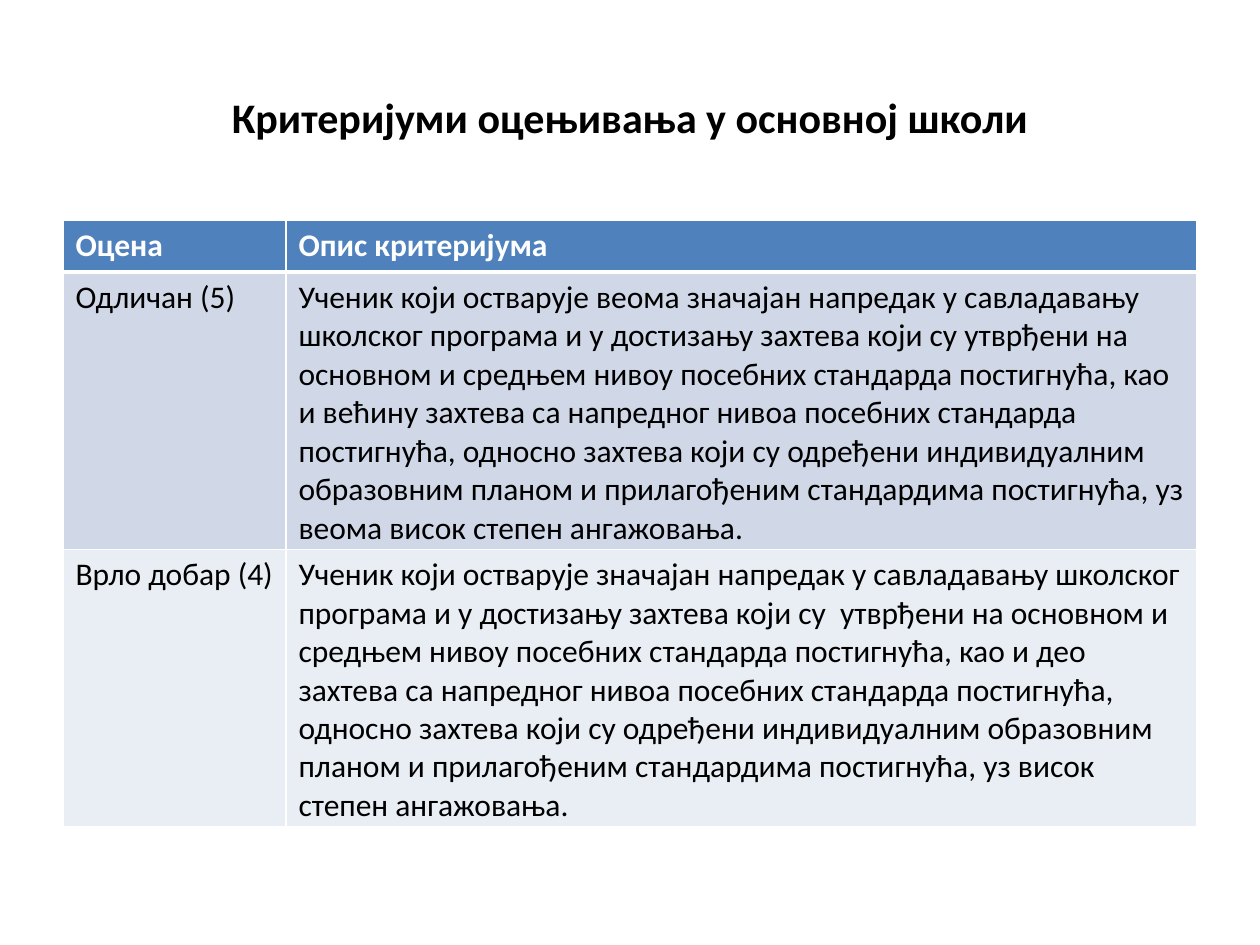
import dataclasses
import typing

import pptx
import pptx.dml.color
import pptx.enum.text
import pptx.oxml
import pptx.oxml.ns
import pptx.util

Inches = pptx.util.Inches
Pt = pptx.util.Pt


@dataclasses.dataclass(frozen=True)
class Theme:
    font: str = "Calibri"
    title: int = 24
    body: int = 18
    black: str = "000000"
    white: str = "FFFFFF"
    head: str = "4F81BD"
    dark: str = "D0D8E8"
    pale: str = "E9EDF4"
    thin: int = 1
    thick: int = 3


@dataclasses.dataclass(frozen=True)
class Row:
    grade: str
    text: str
    fill: str
    ink: str
    high: float
    bold: bool = False


THEME = Theme()
LEFT, WIDE = 0.5, 9
COLS = (1.77, 7.23)
ROWS = (
    Row("Оцена", "Опис критеријума", THEME.head, THEME.white, 0.41, True),
    Row(
        "Одличан (5)",
        "Ученик који остварује веома значајан напредак у савладавању школског "
        "програма и у достизању захтева који су утврђени на основном и средњем "
        "нивоу посебних стандарда постигнућа, као и већину захтева са напредног "
        "нивоа посебних стандарда постигнућа, односно захтева који су одређени "
        "индивидуалним образовним планом и прилагођеним стандардима постигнућа, "
        "уз веома висок степен ангажовања.",
        THEME.dark, THEME.black, 2.2,
    ),
    Row(
        "Врло добар (4)",
        "Ученик који остварује значајан напредак у савладавању школског "
        "програма и у достизању захтева који су  утврђени на основном и средњем "
        "нивоу посебних стандарда постигнућа, као и део захтева са напредног "
        "нивоа посебних стандарда постигнућа, односно захтева који су одређени "
        "индивидуалним образовним планом и прилагођеним стандардима постигнућа, "
        "уз висок степен ангажовања.",
        THEME.pale, THEME.black, 2.2,
    ),
)


def color(code: str) -> pptx.dml.color.RGBColor:
    return pptx.dml.color.RGBColor.from_string(code)


def write(para: typing.Any, text: str, size: int, ink: str, bold: bool) -> None:
    run = para.add_run()
    run.text = text
    run.font.name = THEME.font
    run.font.size = Pt(size)
    run.font.bold = bold
    run.font.color.rgb = color(ink)


def edge(cell: typing.Any, top: int, base: int) -> None:
    props = cell._tc.get_or_add_tcPr()
    space = pptx.oxml.ns.nsdecls("a")
    sides = {"L": THEME.thin, "R": THEME.thin, "T": top, "B": base}
    for side, width in sides.items():
        props.append(pptx.oxml.parse_xml(
            f'<a:ln{side} {space} w="{Pt(width)}"><a:solidFill>'
            f'<a:srgbClr val="{THEME.white}"/></a:solidFill></a:ln{side}>'
        ))


def draw_title(slide: typing.Any, text: str) -> None:
    box = slide.shapes.add_textbox(
        Inches(LEFT), Inches(0.3), Inches(WIDE), Inches(1.25))
    frame = box.text_frame
    frame.word_wrap = True
    frame.vertical_anchor = pptx.enum.text.MSO_ANCHOR.MIDDLE
    para = frame.paragraphs[0]
    para.alignment = pptx.enum.text.PP_ALIGN.CENTER
    write(para, text, THEME.title, THEME.black, True)


def draw_table(slide: typing.Any, rows: typing.Sequence[Row]) -> None:
    table = slide.shapes.add_table(
        len(rows), len(COLS), Inches(LEFT), Inches(1.75), Inches(WIDE),
        Inches(sum(row.high for row in rows))).table
    for col, width in zip(table.columns, COLS):
        col.width = Inches(width)
    for i, row in enumerate(rows):
        table.rows[i].height = Inches(row.high)
        top = THEME.thick if i == 1 else THEME.thin
        base = THEME.thick if i == 0 else THEME.thin
        for j, text in enumerate((row.grade, row.text)):
            cell = table.cell(i, j)
            edge(cell, top, base)
            cell.fill.solid()
            cell.fill.fore_color.rgb = color(row.fill)
            write(cell.text_frame.paragraphs[0], text,
                  THEME.body, row.ink, row.bold)


def main() -> None:
    deck = pptx.Presentation()
    deck.slide_width = Inches(10)
    deck.slide_height = Inches(7.5)
    slide = deck.slides.add_slide(deck.slide_layouts[6])
    draw_title(slide, "Критеријуми оцењивања у основној школи")
    draw_table(slide, ROWS)
    deck.save("out.pptx")


if __name__ == "__main__":
    main()
